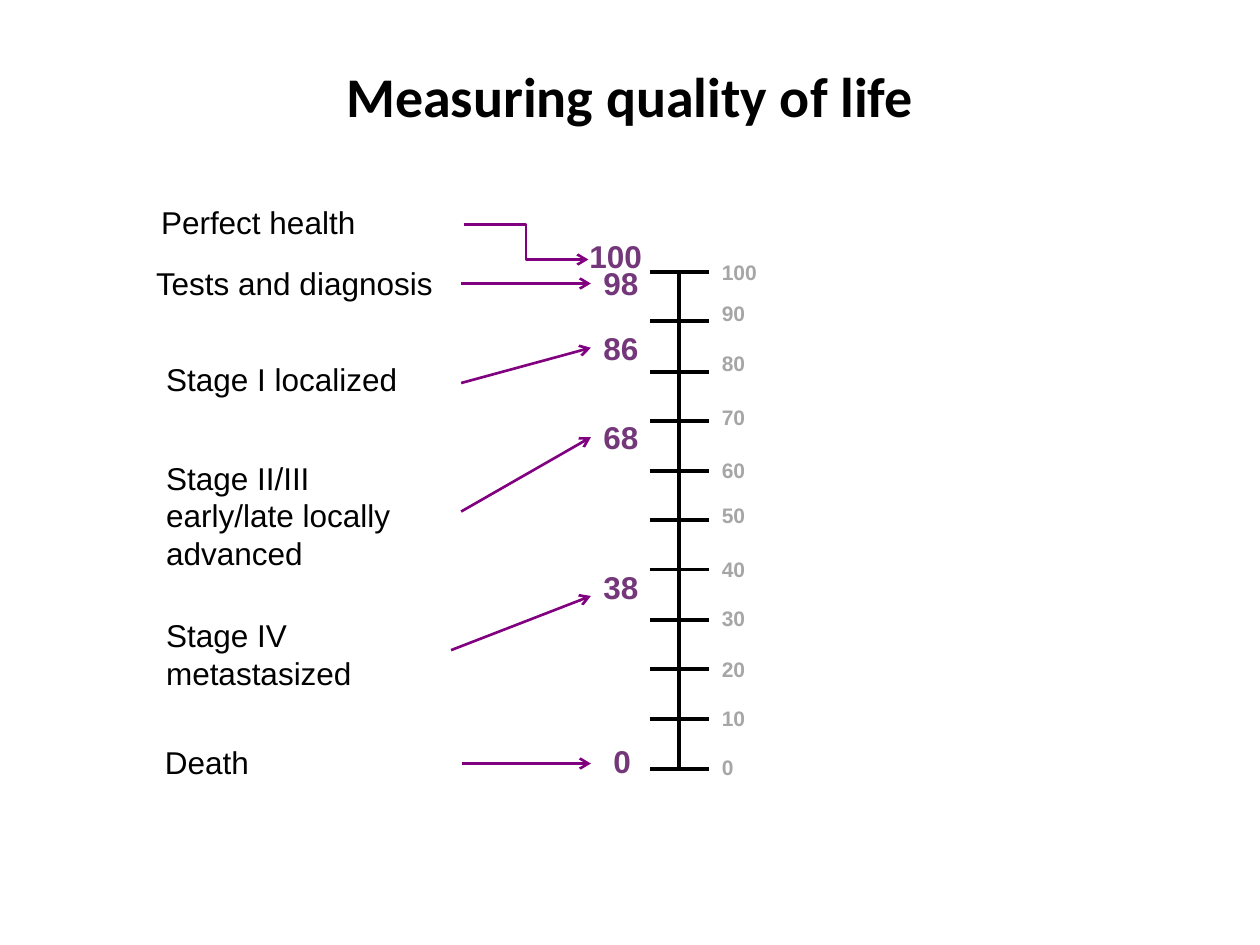
from dataclasses import dataclass

from lxml import etree
from pptx import Presentation
from pptx import util as u
from pptx.dml.color import RGBColor
from pptx.enum import shapes, text
from pptx.oxml.ns import qn

PX = u.Inches(1) // 100


@dataclass(frozen=True)
class Theme:
    ink: str = "000000"
    arrow: str = "800080"
    score: str = "74387A"
    scale: str = "A6A6A6"
    title_font: str = "Calibri"
    body_font: str = "Arial"
    title_size: int = 32
    body_size: int = 18
    scale_size: int = 12
    axis_width: float = 2
    tick_width: float = 2.25
    arrow_width: float = 1.5


THEME = Theme()


@dataclass(frozen=True)
class Label:
    wording: str
    left: int
    top: int
    width: int
    height: int = 40
    size: int = THEME.body_size
    color: str = THEME.ink
    bold: bool = False
    font: str = THEME.body_font
    centered: bool = False
    wrap: bool = True


@dataclass(frozen=True)
class Line:
    x1: int
    y1: int
    x2: int
    y2: int
    color: str = THEME.ink
    width: float = THEME.tick_width
    arrow: bool = False
    bent: bool = False


@dataclass(frozen=True)
class HealthState:
    name: Label
    score: Label
    pointer: Line


def score(wording: str, left: int, top: int, width: int = 55) -> Label:
    return Label(wording, left, top, width, color=THEME.score, bold=True)


def pointer(x1: int, y1: int, x2: int, y2: int, bent: bool = False) -> Line:
    return Line(x1, y1, x2, y2, THEME.arrow, THEME.arrow_width, True, bent)


TITLE = Label("Measuring quality of life", 122, 44, 756, 64, THEME.title_size,
              bold=True, font=THEME.title_font, centered=True)

STATES = [
    HealthState(Label("Perfect health", 118, 156, 176, wrap=False),
                score("100", 458, 183, 72), pointer(368, 178, 467, 206, True)),
    HealthState(Label("Tests and diagnosis", 114, 205, 244),
                score("98", 469, 205), pointer(366, 225, 469, 225)),
    HealthState(Label("Stage I localized", 122, 281, 220),
                score("86", 469, 256), pointer(366, 304, 469, 276)),
    HealthState(Label("Stage II/III early/late locally advanced", 122, 359, 220, 101),
                score("68", 469, 327), pointer(366, 406, 469, 347)),
    HealthState(Label("Stage IV metastasized", 122, 484, 220, 71),
                score("38", 469, 446), pointer(358, 516, 469, 473)),
    HealthState(Label("Death", 121, 585, 220),
                score(" 0", 470, 584), pointer(367, 606, 469, 606)),
]

AXIS_X, AXIS_TOP, AXIS_BOTTOM = 539, 216, 610
TICK_LEFT, TICK_RIGHT = 516, 563
SCALE_TOPS = [201, 234, 273, 316, 358, 394, 437, 476, 516, 555, 594]


def draw_label(slide, label: Label) -> None:
    box = slide.shapes.add_textbox(*(n * PX for n in (
        label.left, label.top, label.width, label.height)))
    frame = box.text_frame
    frame.word_wrap = label.wrap
    frame.auto_size = text.MSO_AUTO_SIZE.SHAPE_TO_FIT_TEXT
    paragraph = frame.paragraphs[0]
    paragraph.text = label.wording
    if label.centered:
        paragraph.alignment = text.PP_ALIGN.CENTER
    font = paragraph.font
    font.name = label.font
    font.size = u.Pt(label.size)
    font.bold = label.bold
    font.color.rgb = RGBColor.from_string(label.color)


def draw_line(slide, line: Line) -> None:
    kind = shapes.MSO_CONNECTOR.ELBOW if line.bent else shapes.MSO_CONNECTOR.STRAIGHT
    connector = slide.shapes.add_connector(
        kind, *(n * PX for n in (line.x1, line.y1, line.x2, line.y2)))
    connector.line.color.rgb = RGBColor.from_string(line.color)
    connector.line.width = u.Pt(line.width)
    properties = connector._element.spPr
    if line.arrow:
        etree.SubElement(properties.find(qn("a:ln")), qn("a:tailEnd"), type="arrow")
    etree.SubElement(properties, qn("a:effectLst"))


def draw_scale(slide) -> None:
    draw_line(slide, Line(AXIS_X, AXIS_TOP, AXIS_X, AXIS_BOTTOM, width=THEME.axis_width))
    steps = len(SCALE_TOPS) - 1
    for step, top in enumerate(SCALE_TOPS):
        y = AXIS_TOP + round(step * (AXIS_BOTTOM - AXIS_TOP) / steps)
        draw_line(slide, Line(TICK_LEFT, y, TICK_RIGHT, y))
        draw_label(slide, Label(str(100 - 10 * step), TICK_RIGHT, top, 55, 30,
                                THEME.scale_size, THEME.scale, True))


def main() -> None:
    deck = Presentation()
    deck.slide_width, deck.slide_height = 1000 * PX, 750 * PX
    slide = deck.slides.add_slide(deck.slide_layouts[6])
    draw_scale(slide)
    draw_label(slide, TITLE)
    for state in STATES:
        draw_label(slide, state.name)
        draw_line(slide, state.pointer)
        draw_label(slide, state.score)
    deck.save("out.pptx")


if __name__ == "__main__":
    main()
